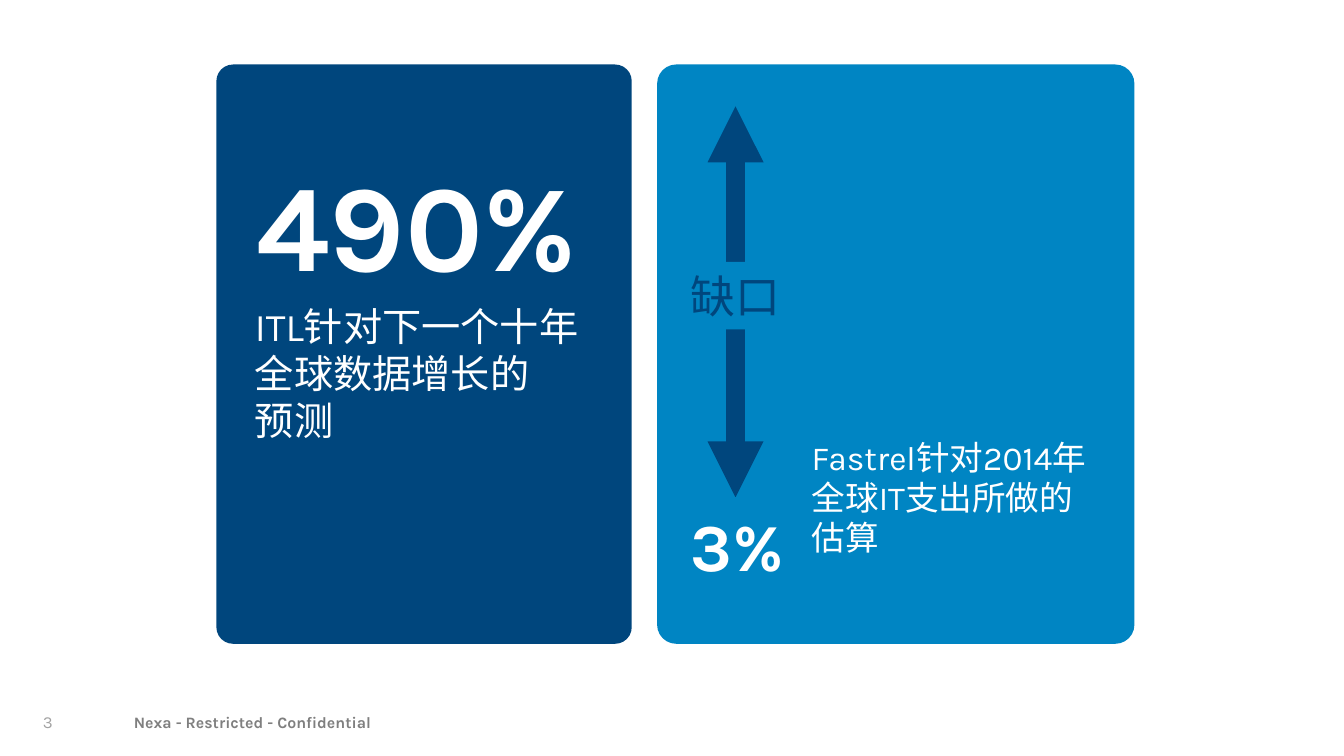
from lxml import etree
from pptx import Presentation
from pptx.dml.color import RGBColor
from pptx.enum.shapes import MSO_CONNECTOR, MSO_SHAPE
from pptx.enum.text import MSO_ANCHOR, PP_ALIGN
from pptx.oxml.ns import qn
from pptx.util import Cm, Pt

NAVY = RGBColor(0x00, 0x46, 0x7D)
BLUE = RGBColor(0x00, 0x85, 0xC3)
WHITE = RGBColor(0xFF, 0xFF, 0xFF)
GRAY = RGBColor(0x7F, 0x7F, 0x7F)
PALE = RGBColor(0xA2, 0xA2, 0xA2)
FONT = "Karla"
RECT = MSO_SHAPE.RECTANGLE
ROUND = MSO_SHAPE.ROUNDED_RECTANGLE
LINE = MSO_CONNECTOR.STRAIGHT
MIDDLE = MSO_ANCHOR.MIDDLE
CENTER = PP_ALIGN.CENTER
BLANK = 6
TOP, HIGH = 1.22, 10.95


def write(frame, text, size, color, bold=False):
    frame.text = text
    para = frame.paragraphs[0]
    for run in para.runs:
        run.font.name = FONT
        run.font.size = Pt(size)
        run.font.bold = bold
        run.font.color.rgb = color
    return para


def add_text(slide, box, text, size, color, bold=False, space=1.0):
    shape = slide.shapes.add_textbox(*map(Cm, box))
    frame = shape.text_frame
    frame.word_wrap = True
    write(frame, text, size, color, bold).line_spacing = space
    return frame


def add_block(slide, kind, box, fill):
    shape = slide.shapes.add_shape(kind, *map(Cm, box))
    shape.shadow.inherit = False
    shape.fill.solid()
    shape.fill.fore_color.rgb = fill
    shape.line.fill.background()
    return shape


def add_panel(slide, left, width, fill):
    panel = add_block(slide, ROUND, (left, TOP, width, HIGH), fill)
    panel.adjustments[0] = 0.04


def add_label(slide, box, text, size, color, bold=False):
    frame = add_block(slide, RECT, box, BLUE).text_frame
    frame.word_wrap = False
    frame.vertical_anchor = MIDDLE
    write(frame, text, size, color, bold).alignment = CENTER


def add_arrow(slide, x, top, end):
    arrow = slide.shapes.add_connector(LINE, Cm(x), Cm(top), Cm(x), Cm(end))
    arrow.line.color.rgb = NAVY
    arrow.line.width = Pt(10)
    line = arrow.line._get_or_add_ln()
    for tag in ("a:headEnd", "a:tailEnd"):
        etree.SubElement(line, qn(tag), type="triangle")
    etree.SubElement(arrow._element.spPr, qn("a:effectLst"))


def add_foot(slide):
    add_text(slide, (2.28, 13.39, 12, 0.99),
             "Nexa - Restricted - Confidential", 8.5, GRAY, True, 0.9)
    frame = add_text(slide, (0.81, 13.54, 0.74, 0.25), "3", 9, PALE, space=0.9)
    frame.margin_left = frame.margin_right = 0
    frame.margin_top = frame.margin_bottom = 0
    frame.vertical_anchor = MIDDLE


def add_growth(slide):
    add_panel(slide, 4.09, 7.85, NAVY)
    add_text(slide, (4.6, 3, 6.99, 4.22), "490%", 66, WHITE, True, 0.9)
    add_text(slide, (4.57, 5.59, 7.04, 4.19),
             "ITL针对下一个十年全球数据增长的\v预测", 21, WHITE)


def add_spend(slide):
    add_panel(slide, 12.42, 9.02, BLUE)
    add_arrow(slide, 13.9, 2.01, 9.4)
    add_label(slide, (12.78, 4.95, 2.24, 1.28), "缺口", 24, NAVY)
    add_label(slide, (12.8, 9.4, 2.26, 1.8), "3%", 36, WHITE, True)
    add_text(slide, (15.09, 8.13, 6.32, 2.57),
             "Fastrel针对2014年全球IT支出所做的\v估算", 18, WHITE)


def main():
    deck = Presentation()
    deck.slide_width, deck.slide_height = Cm(25.4), Cm(14.29)
    slide = deck.slides.add_slide(deck.slide_layouts[BLANK])
    add_foot(slide)
    add_growth(slide)
    add_spend(slide)
    deck.save("out.pptx")


if __name__ == "__main__":
    main()
